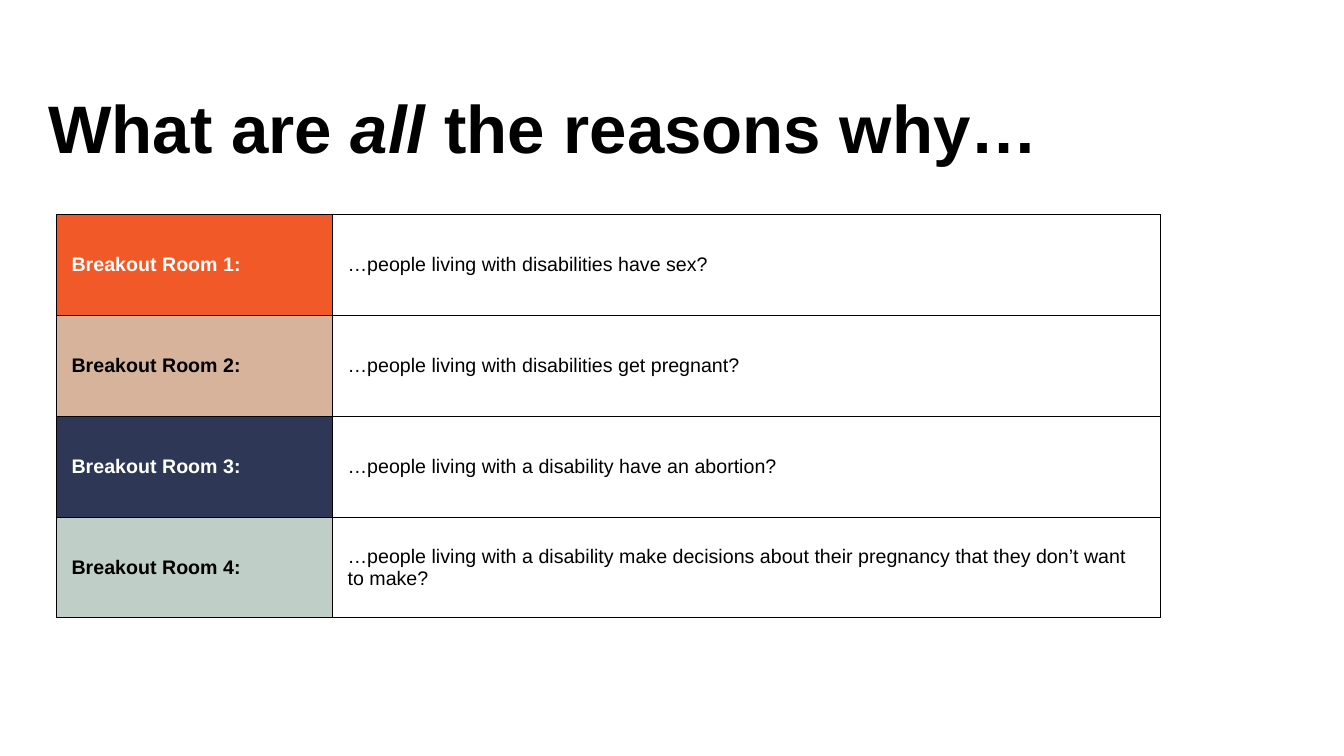
import pptx
import pptx.dml.color
import pptx.enum.text
import pptx.oxml
import pptx.oxml.ns
import pptx.util
from pptx.util import Inches

RGBColor = pptx.dml.color.RGBColor
Anchor = pptx.enum.text.MSO_ANCHOR

BLACK = RGBColor(0x00, 0x00, 0x00)
WHITE = RGBColor(0xFF, 0xFF, 0xFF)
ORANGE = RGBColor(0xF1, 0x59, 0x28)
TAN = RGBColor(0xD8, 0xB3, 0x9C)
NAVY = RGBColor(0x2E, 0x38, 0x56)
SAGE = RGBColor(0xC0, 0xCE, 0xC8)

HEADING = [("What are ", False), ("all", True), (" the reasons why…", False)]
ROOMS = [
    (ORANGE, WHITE, "…people living with disabilities have sex?"),
    (TAN, BLACK, "…people living with disabilities get pregnant?"),
    (NAVY, WHITE, "…people living with a disability have an abortion?"),
    (SAGE, BLACK, "…people living with a disability make decisions about "
                  "their pregnancy that they don’t want to make?"),
]


def set_all(target, values):
    for attribute, value in values.items():
        setattr(target, attribute, value)


def margins(size):
    sides = ("left", "top", "right", "bottom")
    return {f"margin_{side}": Inches(size) for side in sides}


def add_words(paragraph, words, size, color, bold, italic=False):
    run = paragraph.add_run()
    run.text = words
    set_all(run.font, {"name": "Arial", "size": pptx.util.Pt(size),
                       "bold": bold, "italic": italic})
    run.font.color.rgb = color


def add_borders(cell):
    properties = cell._tc.get_or_add_tcPr()
    namespace = pptx.oxml.ns.nsdecls("a")
    for position, side in enumerate(("lnL", "lnR", "lnT", "lnB")):
        border = pptx.oxml.parse_xml(
            f'<a:{side} {namespace} w="12700"><a:solidFill>'
            f'<a:srgbClr val="{BLACK}"/></a:solidFill></a:{side}>')
        properties.insert(position, border)


def fill_cell(cell, words, color, bold, background=None):
    set_all(cell, {"vertical_anchor": Anchor.MIDDLE, **margins(0.15)})
    if background is None:
        cell.fill.background()
    else:
        cell.fill.solid()
        cell.fill.fore_color.rgb = background
    add_words(cell.text_frame.paragraphs[0], words, 14, color, bold)
    add_borders(cell)


def place_heading(slide, left, top, width, height):
    heading = slide.shapes.title
    set_all(heading, {"left": Inches(left), "top": Inches(top),
                      "width": Inches(width), "height": Inches(height)})
    set_all(heading.text_frame, {
        "word_wrap": True, "vertical_anchor": Anchor.TOP,
        "auto_size": pptx.enum.text.MSO_AUTO_SIZE.NONE, **margins(0.1)})
    line = heading.text_frame.paragraphs[0]
    set_all(line, {"alignment": pptx.enum.text.PP_ALIGN.LEFT,
                   "line_spacing": 1.1})
    for words, italic in HEADING:
        add_words(line, words, 48, BLACK, True, italic)


def place_rooms(slide, left, top, width, height):
    rooms = slide.shapes.add_table(
        len(ROOMS), 2, Inches(left), Inches(top),
        Inches(width), Inches(height)).table
    set_all(rooms, {"first_row": False, "horz_banding": False})
    label_width = width / 4
    rooms.columns[0].width = Inches(label_width)
    rooms.columns[1].width = Inches(width - label_width)
    for index, (background, label_color, question) in enumerate(ROOMS):
        fill_cell(rooms.cell(index, 0), f"Breakout Room {index + 1}:",
                  label_color, True, background)
        fill_cell(rooms.cell(index, 1), question, BLACK, False)


def main():
    deck = pptx.Presentation()
    set_all(deck, {"slide_width": Inches(13.33), "slide_height": Inches(7.5)})
    slide = deck.slides.add_slide(deck.slide_layouts.get_by_name("Title Only"))
    place_heading(slide, 0.38, 0.68, 10.23, 1.45)
    place_rooms(slide, 0.56, 2.13, 10.95, 4)
    deck.save("out.pptx")


if __name__ == "__main__":
    main()
